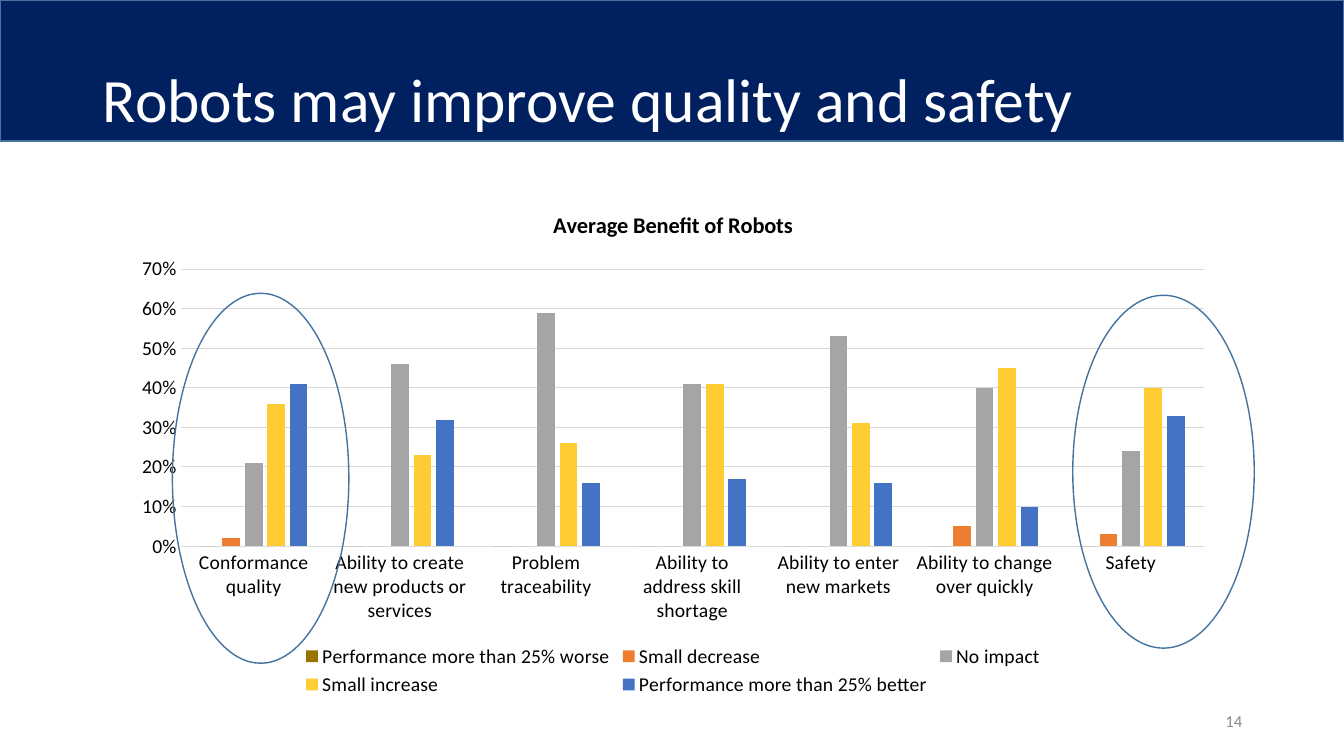
from dataclasses import dataclass

from pptx import Presentation
from pptx.chart.data import CategoryChartData
from pptx.dml.color import RGBColor
from pptx.enum.chart import XL_CHART_TYPE as Chart, XL_LEGEND_POSITION as Legend, XL_TICK_MARK as Tick
from pptx.enum.shapes import MSO_SHAPE as Shape
from pptx.enum.text import MSO_ANCHOR as Anchor, PP_ALIGN as Align
from pptx.util import Pt

PX = 9144  # EMU per px, 100 px to the inch


@dataclass(frozen=True)
class Theme:
    font: str = "Calibri"
    band: str = "002060"
    outline: str = "43739E"
    grid: str = "D9D9D9"
    text: str = "000000"
    title: str = "FFFFFF"
    number: str = "8C8C8C"
    title_size: int = 44
    chart_title_size: int = 16
    chart_size: int = 14
    number_size: int = 12


THEME = Theme()

CATEGORIES = [
    "Conformance quality", "Ability to create new products or services",
    "Problem traceability", "Ability to address skill shortage",
    "Ability to enter new markets", "Ability to change over quickly", "Safety",
]
SERIES = [
    ("Performance more than 25% worse", "997300", [0, 0, 0, 0, 0, 0, 0]),
    ("Small decrease", "ED7D31", [0.02, 0, 0, 0, 0, 0.05, 0.03]),
    ("No impact", "A5A5A5", [0.21, 0.46, 0.59, 0.41, 0.53, 0.4, 0.24]),
    ("Small increase", "FFCD33", [0.36, 0.23, 0.26, 0.41, 0.31, 0.45, 0.4]),
    ("Performance more than 25% better", "4472C4",
     [0.41, 0.32, 0.16, 0.17, 0.16, 0.1, 0.33]),
]


def emu(box):
    return [v * PX for v in box]


def rgb(code):
    return RGBColor.from_string(code)


def style_font(font, size, color, bold=False):
    font.name, font.size, font.bold = THEME.font, Pt(size), bold
    font.color.rgb = rgb(color)


def style_line(line, color, width):
    line.color.rgb = rgb(color)
    line.width = Pt(width)


def add_outlined(s, kind, box, fill=None):
    sp = s.shapes.add_shape(kind, *emu(box))
    sp.shadow.inherit = False
    if fill:
        sp.fill.solid()
        sp.fill.fore_color.rgb = rgb(fill)
    else:
        sp.fill.background()
    style_line(sp.line, THEME.outline, 1)
    return sp


def add_header(s, box, text):
    """Draw the band and set the title over its lower part."""
    x, y, w, h = box
    title = s.shapes.title
    band = add_outlined(s, Shape.RECTANGLE, box, THEME.band)
    title.element.addprevious(band.element)
    title.left, title.top, title.width, title.height = emu(
        (x + 92, y + 29, w - 183, h + 5))
    tf = title.text_frame
    tf.text = text
    tf.word_wrap = True
    tf.vertical_anchor = Anchor.MIDDLE
    p = tf.paragraphs[0]
    p.alignment = Align.LEFT
    p.line_spacing = 0.9
    style_font(p.runs[0].font, THEME.title_size, THEME.title)


def style_axes(chart):
    cat, val = chart.category_axis, chart.value_axis
    for axis in (cat, val):
        axis.major_tick_mark = axis.minor_tick_mark = Tick.NONE
        style_font(axis.tick_labels.font, THEME.chart_size, THEME.text)
    style_line(cat.format.line, THEME.grid, 0.75)
    val.format.line.fill.background()
    val.minimum_scale, val.maximum_scale, val.major_unit = 0, 0.7, 0.1
    val.tick_labels.number_format = "0%"
    val.tick_labels.number_format_is_linked = False
    style_line(val.major_gridlines.format.line, THEME.grid, 0.75)


def add_benefit_chart(s, box):
    data = CategoryChartData(number_format="0%")
    data.categories = CATEGORIES
    for name, _, values in SERIES:
        data.add_series(name, values)
    chart = s.shapes.add_chart(Chart.COLUMN_CLUSTERED, *emu(box), data).chart
    style_font(chart.font, THEME.chart_size, THEME.text)

    tf = chart.chart_title.text_frame
    tf.text = "Average Benefit of Robots"
    style_font(tf.paragraphs[0].runs[0].font, THEME.chart_title_size, THEME.text, True)
    chart.chart_title.include_in_layout = False

    chart.has_legend = True
    chart.legend.position = Legend.BOTTOM
    chart.legend.include_in_layout = False
    style_font(chart.legend.font, THEME.chart_size, THEME.text)
    style_axes(chart)

    plot = chart.plots[0]
    plot.gap_width, plot.overlap, plot.vary_by_categories = 219, -27, False
    for series, (_, color, _) in zip(plot.series, SERIES):
        series.invert_if_negative = False
        series.format.fill.solid()
        series.format.fill.fore_color.rgb = rgb(color)


def add_page_number(s, box, number):
    tf = s.shapes.add_textbox(*emu(box)).text_frame
    tf.text = str(number)
    tf.word_wrap = True
    tf.vertical_anchor = Anchor.MIDDLE
    p = tf.paragraphs[0]
    p.alignment = Align.RIGHT
    style_font(p.runs[0].font, THEME.number_size, THEME.number)


def main():
    prs = Presentation()
    prs.slide_width, prs.slide_height = emu((1333, 750))
    s = prs.slides.add_slide(prs.slide_layouts.get_by_name("Title Only"))
    add_header(s, (0, 0, 1333, 140), "Robots may improve quality and safety")
    add_page_number(s, (942, 695, 300, 40), 14)
    add_benefit_chart(s, (119, 189, 1097, 506))
    for highlight in ((1064, 293, 180, 350), (171, 291, 175, 367)):
        add_outlined(s, Shape.OVAL, highlight)
    prs.save("out.pptx")


if __name__ == "__main__":
    main()
